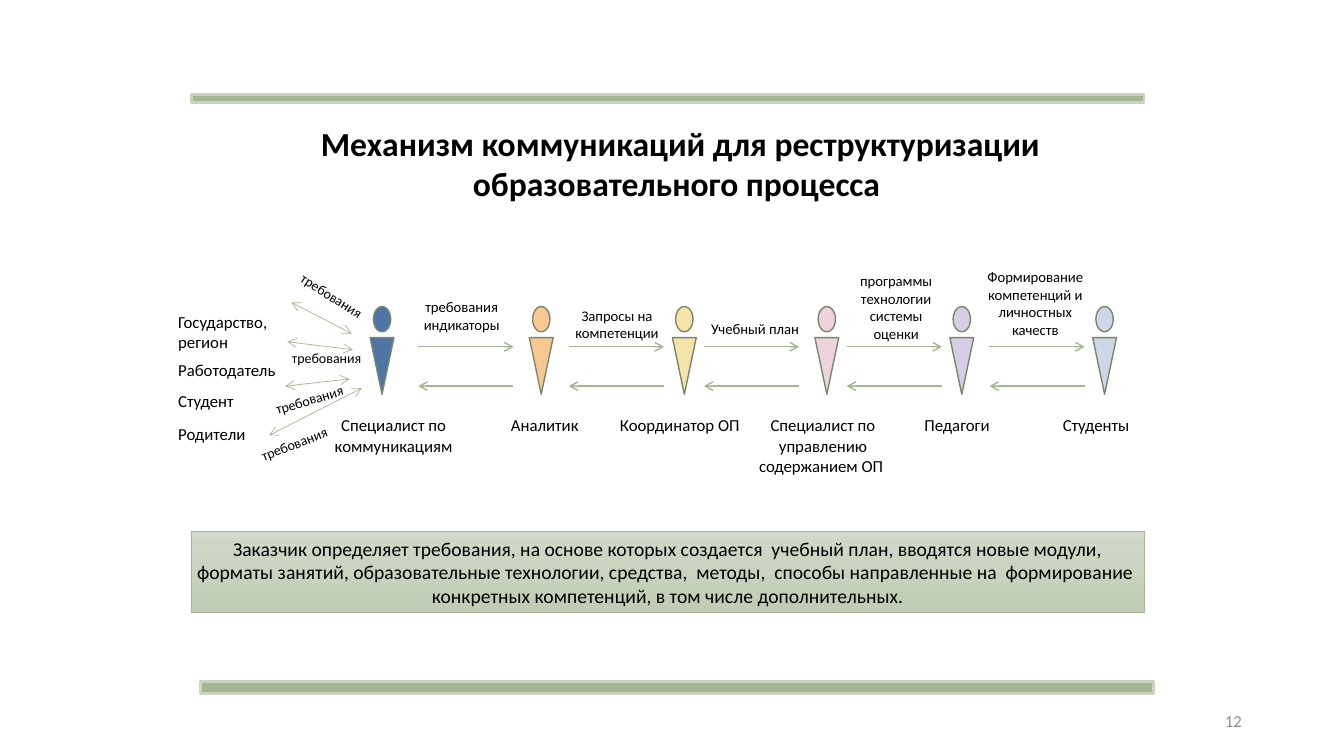
from lxml.etree import SubElement
from pptx import Presentation
from pptx.dml.color import RGBColor
from pptx.enum.shapes import MSO_CONNECTOR as CONNECTOR, MSO_SHAPE as SHAPE
from pptx.enum.text import MSO_ANCHOR as ANCHOR, PP_ALIGN as ALIGN
from pptx.oxml.ns import qn
from pptx.util import Pt

BLACK = RGBColor(0x00, 0x00, 0x00)
GREY = RGBColor(0x8C, 0x8C, 0x8C)
GREEN = RGBColor(0xA5, 0xB5, 0x92)
PALE_GREEN = RGBColor(0xC9, 0xD3, 0xBE)
OUTLINE = RGBColor(0x7A, 0x86, 0x6C)
NOTE_TOP = RGBColor(0xD1, 0xD9, 0xC9)
NOTE_BOTTOM = RGBColor(0xC0, 0xCC, 0xB3)
BLUE = RGBColor(0x4E, 0x75, 0xA3)
ORANGE = RGBColor(0xF8, 0xC8, 0x91)
YELLOW = RGBColor(0xF5, 0xE4, 0xA9)
PINK = RGBColor(0xEC, 0xD3, 0xDC)
VIOLET = RGBColor(0xD7, 0xCE, 0xE6)
LIGHT_BLUE = RGBColor(0xCC, 0xD8, 0xE7)

DEMAND = "требования"
ROLES = [
    (272.9, 281.2, BLUE, "Специалист по коммуникациям"),
    (386.6, 389.2, ORANGE, "Аналитик"),
    (488.8, 485.6, YELLOW, "Координатор ОП"),
    (590.6, 587.9, PINK, "Специалист по управлению содержанием ОП "),
    (687, 683.6, VIOLET, "Педагоги"),
    (789, 783, LIGHT_BLUE, "Студенты"),
]
EXCHANGES = [
    (298.8, 287.3, 209.5, [DEMAND, "индикаторы"]),
    (406.3, 398.2, 215.3, ["Запросы на компетенции"]),
    (502.8, 496.8, 224.6, ["Учебный план"]),
    (604.8, 597.6, 190.8, ["программы технологии", "системы", "оценки"]),
    (706.8, 697, 187.9, ["Формирование компетенций и личностных качеств"]),
]
CUSTOMERS = [
    (218.9, 82, "Государство, регион"),
    (253.4, 94, "Работодатель"),
    (275.8, 71, "Студент"),
    (298.8, 71, "Родители"),
]
DEMANDS = [
    (204.5, 201.6, 32.3, (208.1, 216), (251.3, 238.3)),
    (200.9, 246.2, 0, (205.2, 244.1), (252, 249.8)),
    (188.6, 275.8, -16.6, (203.8, 275.8), (249.8, 270.7)),
    (177.8, 307.4, -21.2, (192.2, 311), (258.5, 277.2)),
]
NOTE = (
    "Заказчик определяет требования, на основе которых создается  учебный план, "
    "вводятся новые модули, форматы занятий, образовательные технологии, средства,  "
    "методы,  способы направленные на  формирование  конкретных компетенций, "
    "в том числе дополнительных."
)


def apply(target, formats):
    """Set every attribute in formats on target."""
    for name, value in formats.items():
        setattr(target, name, value)


def write(shape, lines, size, align=ALIGN.CENTER, color=BLACK, bold=False):
    """Fill a shape with one paragraph per line."""
    frame = shape.text_frame
    frame.word_wrap = True
    for index, line in enumerate(lines):
        para = frame.paragraphs[0] if index == 0 else frame.add_paragraph()
        para.alignment = align
        span = para.add_run()
        span.text = line
        apply(span.font, {"name": "Calibri", "size": Pt(size), "bold": bold})
        span.font.color.rgb = color


def add_text(page, bounds, lines, size, **formats):
    """Add a wrapping text box."""
    box = page.shapes.add_textbox(*map(Pt, bounds))
    write(box, lines, size, **formats)
    return box


def add_block(shapes, kind, bounds, fill, line, width):
    """Add a filled and outlined preset shape."""
    block = shapes.add_shape(kind, *map(Pt, bounds))
    block.shadow.inherit = False
    block.fill.solid()
    block.fill.fore_color.rgb = fill
    block.line.color.rgb = line
    block.line.width = Pt(width)
    return block


def add_person(page, center, color):
    """Add a figure made of a head and a pointed body."""
    shapes = page.shapes.add_group_shape().shapes
    body = add_block(shapes, SHAPE.ISOSCELES_TRIANGLE,
                     (center - 8.5, 241.2, 17, 40.4), color, OUTLINE, 1)
    body.rotation = 180
    add_block(shapes, SHAPE.OVAL, (center - 6.2, 219, 12.4, 18), color, OUTLINE, 1)


def add_arrow(page, start, end, width, ends=("tailEnd",)):
    """Add a straight line with open arrowheads at the given ends."""
    arrow = page.shapes.add_connector(CONNECTOR.STRAIGHT, *map(Pt, start + end))
    arrow.line.color.rgb = GREEN
    arrow.line.width = Pt(width)
    for name in ends:
        SubElement(arrow.get_or_add_ln(), qn(f"a:{name}"), type="arrow")
    SubElement(arrow.element.spPr, qn("a:effectLst"))


def add_note(page):
    """Add the shaded summary box."""
    note = add_block(page.shapes, SHAPE.RECTANGLE, (136.8, 379.4, 680.4, 58.3),
                     NOTE_TOP, GREEN, 0.5)
    note.fill.gradient()
    note.fill.gradient_angle = 270
    for stop, color in zip(note.fill.gradient_stops, (NOTE_TOP, NOTE_BOTTOM)):
        stop.color.rgb = color
    sides = ("left", "top", "right", "bottom")
    apply(note.text_frame, {f"margin_{side}": Pt(3.6) for side in sides})
    write(note, [NOTE], 14)


def main():
    """Build the slide and save the deck."""
    deck = Presentation()
    apply(deck, {"slide_width": Pt(960), "slide_height": Pt(540)})
    page = deck.slides.add_slide(deck.slide_layouts[6])

    add_text(page, (126, 84.2, 720, 65.5),
             ["Механизм коммуникаций для реструктуризации образовательного процесса "],
             24, bold=True)
    for bounds in ((136.8, 67.7, 680.4, 5.8), (143.3, 486.7, 680.4, 8.6)):
        add_block(page.shapes, SHAPE.RECTANGLE, bounds, GREEN, PALE_GREEN, 2)

    for center, label_center, color, role in ROLES:
        add_person(page, center, color)
        add_text(page, (label_center - 56.5, 293, 113, 22), [role], 12)
    for left, caption_left, top, lines in EXCHANGES:
        add_arrow(page, (left, 247.7), (left + 68, 247.7), 1)
        add_arrow(page, (left + 68, 275.8), (left, 275.8), 1)
        add_text(page, (caption_left, top, 85, 20), lines, 10.5)
    for top, width, customer in CUSTOMERS:
        add_text(page, (120.2, top, width, 22), [customer], 12, align=ALIGN.LEFT)
    for left, top, angle, start, end in DEMANDS:
        add_text(page, (left, top, 64.8, 19.4), [DEMAND], 10).rotation = angle
        add_arrow(page, start, end, 0.5, ("headEnd", "tailEnd"))

    add_note(page)
    number = add_text(page, (678.2, 500.4, 216, 28.8), ["12"], 12,
                      align=ALIGN.RIGHT, color=GREY)
    number.text_frame.vertical_anchor = ANCHOR.MIDDLE
    deck.save("out.pptx")


if __name__ == "__main__":
    main()
